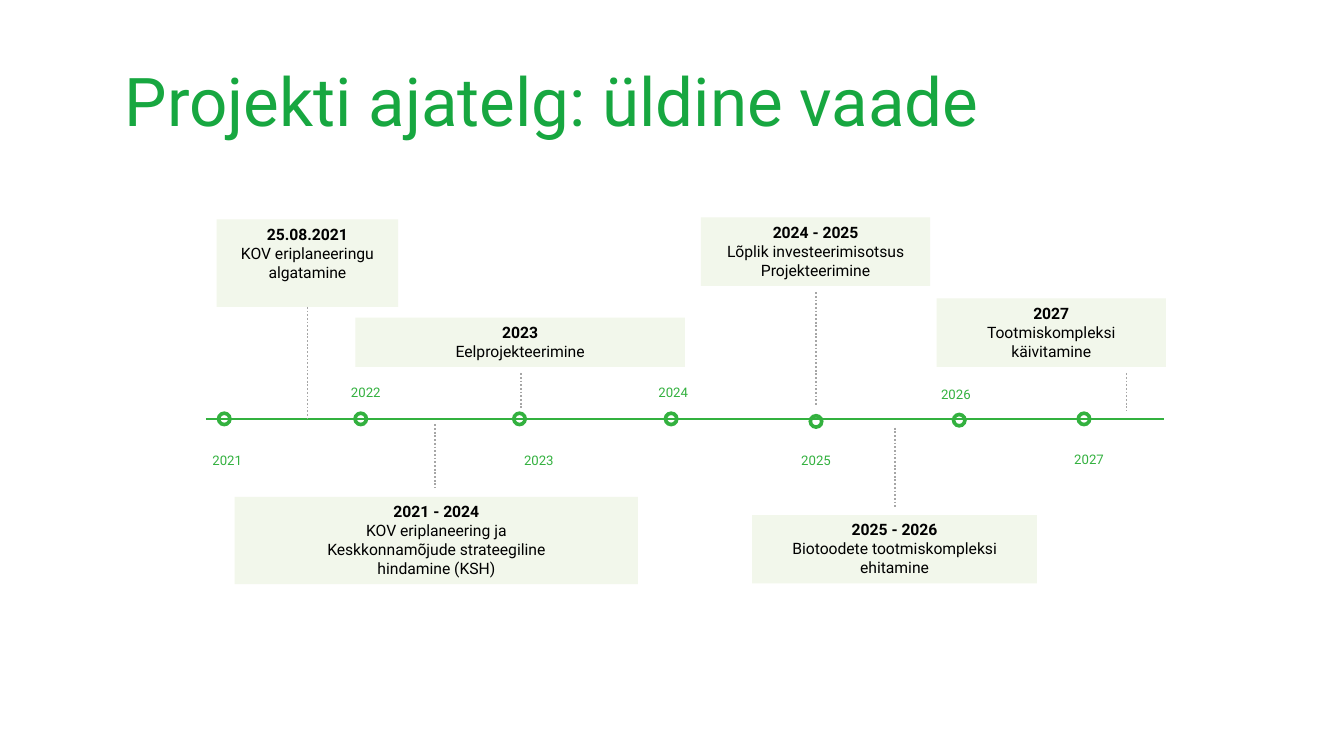
from lxml import etree
from pptx import Presentation
from pptx.dml.color import RGBColor
from pptx.enum.dml import MSO_LINE
from pptx.enum.shapes import MSO_CONNECTOR, MSO_SHAPE
from pptx.enum.text import MSO_ANCHOR, MSO_AUTO_SIZE, PP_ALIGN
from pptx.oxml.ns import qn
from pptx.util import Cm, Pt

DOTS = MSO_LINE.ROUND_DOT
LINE = MSO_CONNECTOR.STRAIGHT
RECT, RING = MSO_SHAPE.RECTANGLE, MSO_SHAPE.DONUT
TOP, MIDDLE = MSO_ANCHOR.TOP, MSO_ANCHOR.MIDDLE
FIXED = MSO_AUTO_SIZE.NONE
LEFT, CENTER = PP_ALIGN.LEFT, PP_ALIGN.CENTER
GREEN, PALE, GREY = "33B13F", "F2F7EB", "A6A6A6"
AXIS = 9.98


def style(par, size, color, align=CENTER, bold=False):
    par.alignment = align
    par.font.name = "Roboto"
    par.font.size = Pt(size)
    par.font.bold = bold
    par.font.color.rgb = RGBColor.from_string(color)


def draw_line(x1, y1, x2, y2, color, width):
    line = slide.shapes.add_connector(LINE, Cm(x1), Cm(y1), Cm(x2), Cm(y2))
    line.line.color.rgb = RGBColor.from_string(color)
    line.line.width = Pt(width)
    etree.SubElement(line._element.spPr, qn("a:effectLst"))
    return line


deck = Presentation()
deck.slide_width, deck.slide_height = Cm(32), Cm(18.01)
slide = deck.slides.add_slide(deck.slide_layouts[5])

title = slide.shapes.title
title.left, title.top, title.width, title.height = Cm(2.72), Cm(1.12), Cm(24.84), Cm(2.74)
title.text = "Projekti ajatelg: üldine vaade"
title.text_frame.auto_size = FIXED
title.text_frame.vertical_anchor = MIDDLE
head = title.text_frame.paragraphs[0]
style(head, 45.4, "17A740", LEFT)
head.line_spacing = 0.9

draw_line(4.9, AXIS, 27.71, AXIS, GREEN, 1.5)

events = [
    (5.16, 5.23, 4.32, 2.08, "25.08.2021", ["KOV eriplaneeringu algatamine"], (7.32, 7.31, AXIS)),
    (5.59, 11.84, 9.6, 2.08, "2021 - 2024",
     ["KOV eriplaneering ja\vKeskkonnamõjude strateegiline\vhindamine (KSH)"], (10.36, 10.11, 11.61)),
    (8.46, 7.57, 7.85, 1.17, "2023", ["Eelprojekteerimine"], (12.4, 8.89, 9.75)),
    (16.69, 5.18, 5.46, 1.63, "2024 - 2025",
     ["Lõplik investeerimisotsus", "Projekteerimine"], (19.43, 6.96, 9.68)),
    (17.91, 12.27, 6.78, 1.63, "2025 - 2026",
     ["Biotoodete tootmiskompleksi ehitamine"], (21.31, 10.19, 12.09)),
    (22.3, 7.11, 5.46, 1.63, "2027", ["Tootmiskompleksi", "käivitamine"], (26.82, 8.89, 9.8)),
]
for left, top, width, height, date, steps, (x, start, end) in events:
    box = slide.shapes.add_shape(RECT, Cm(left), Cm(top), Cm(width), Cm(height))
    box.shadow.inherit = False
    box.fill.solid()
    box.fill.fore_color.rgb = RGBColor.from_string(PALE)
    box.line.fill.background()
    frame = box.text_frame
    frame.word_wrap = True
    frame.vertical_anchor = TOP
    frame.text = "\n".join([date] + steps)
    for i, par in enumerate(frame.paragraphs):
        style(par, 10.6, "000000", bold=i == 0)
    stem = draw_line(x, start, x, end, GREY, 1.25)
    stem.line.dash_style = DOTS
    if end == AXIS:
        stem.begin_connect(box, 2)

years = [
    (5.16, 9.8, 4.52, 10.64),
    (8.41, 9.8, 7.82, 9.02),
    (12.19, 9.8, 11.94, 10.64),
    (15.8, 9.8, 15.14, 9.02),
    (19.25, 9.86, 18.54, 10.64),
    (22.66, 9.83, 21.87, 9.07),
    (25.63, 9.8, 25.04, 10.62),
]
for year, (x, y, left, top) in enumerate(years, 2021):
    ring = slide.shapes.add_shape(RING, Cm(x), Cm(y), Cm(0.36), Cm(0.36))
    ring.shadow.inherit = False
    ring.fill.solid()
    ring.fill.fore_color.rgb = RGBColor.from_string(GREEN)
    ring.line.fill.background()
    label = slide.shapes.add_textbox(Cm(left), Cm(top), Cm(1.78), Cm(0.64))
    label.text_frame.word_wrap = True
    label.text_frame.text = str(year)
    style(label.text_frame.paragraphs[0], 8.9, GREEN)

deck.save("out.pptx")
